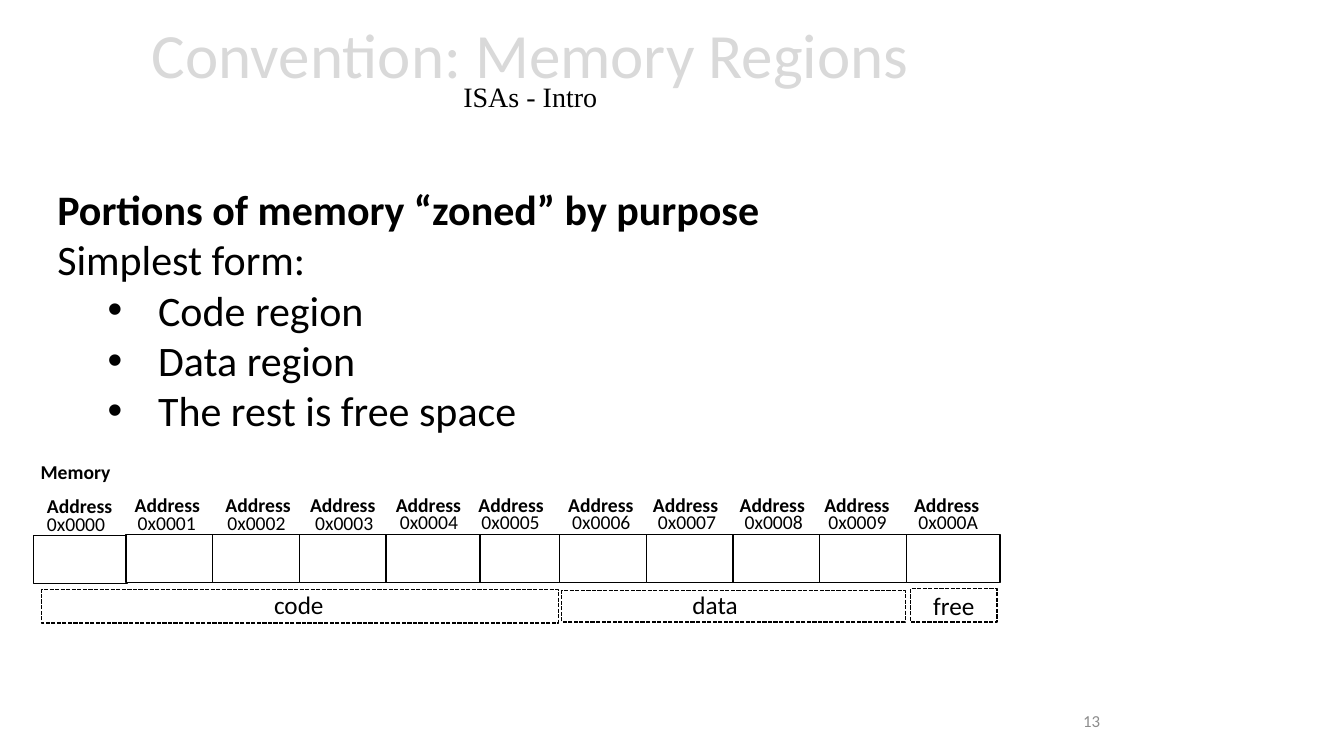
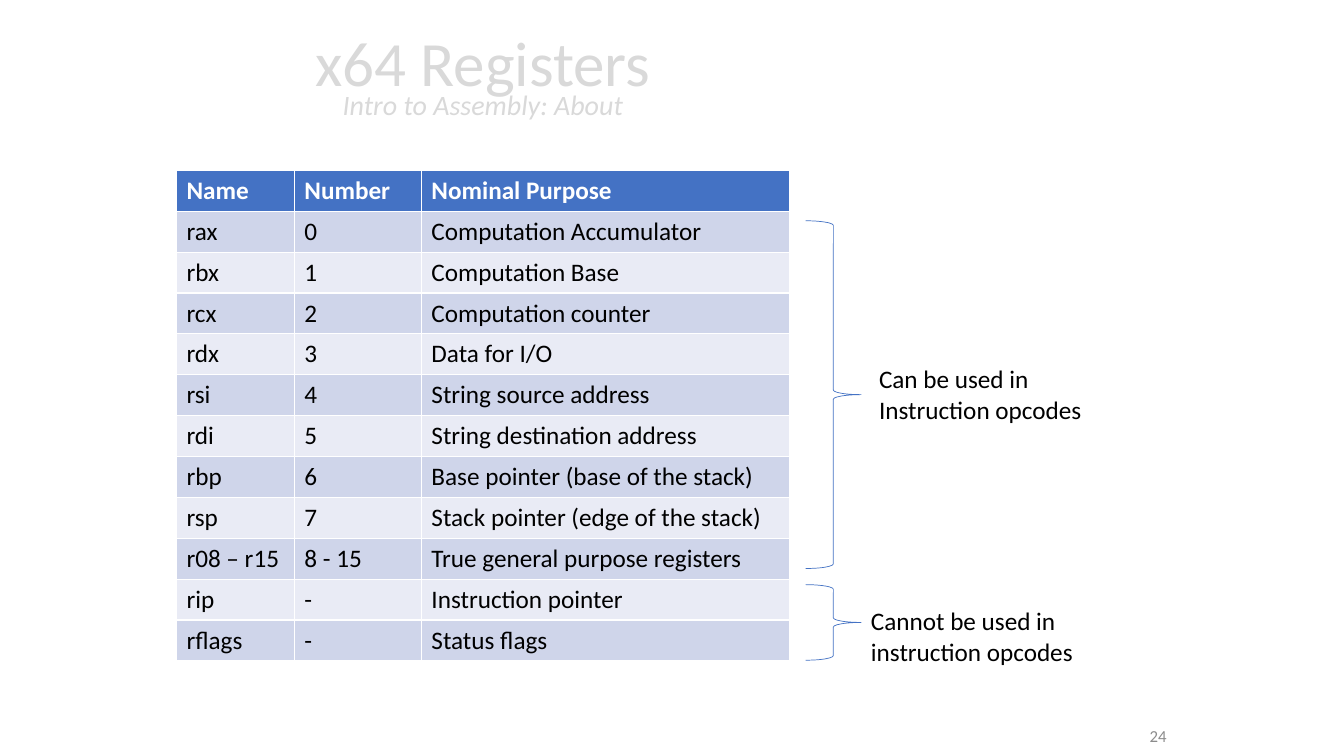
from dataclasses import dataclass

from lxml import etree
from pptx import Presentation
from pptx import util as u
from pptx.dml.color import RGBColor
from pptx.enum import dml, shapes, text
from pptx.oxml import ns

BLACK, WHITE, BLUE = "000000", "FFFFFF", "4472C4"
PALE, GREY = "D9D9D9", "8C8C8C"
BANDS = ("CFD5EA", "E9EBF5")
FONT = "Calibri"


@dataclass(frozen=True)
class Area:
    left: float
    top: float
    width: float
    height: float

    def lengths(self) -> list:
        return [u.Inches(n) for n in (self.left, self.top, self.width, self.height)]


@dataclass(frozen=True)
class Style:
    size: float = 18
    color: str = BLACK
    bold: bool = False
    italic: bool = False
    font: str = FONT


@dataclass(frozen=True)
class MemoryCell:
    address: str
    heading_left: float
    address_left: float
    address_top: float = 5.01
    offset: float = 0


@dataclass(frozen=True)
class Region:
    name: str
    frame: Area
    label: Area


@dataclass(frozen=True)
class Brace:
    frame: Area
    label: Area
    note: str


TITLE = Style(45, PALE)
SMALL = Style(14)
SMALL_BOLD = Style(14, bold=True)

CELLS = (
    MemoryCell("0x0000", 0.40, 0.44, 5.03, 0.01),
    MemoryCell("0x0001", 1.27, 1.34, 5.02),
    MemoryCell("0x0002", 2.17, 2.23, 5.02),
    MemoryCell("0x0003", 3.01, 3.10, 5.02),
    MemoryCell("0x0004", 3.86, 3.94),
    MemoryCell("0x0005", 4.68, 4.75),
    MemoryCell("0x0006", 5.57, 5.65),
    MemoryCell("0x0007", 6.41, 6.50),
    MemoryCell("0x0008", 7.27, 7.36),
    MemoryCell("0x0009", 8.11, 8.19),
    MemoryCell("0x000A", 9.00, 9.09),
)
REGIONS = (
    Region("code", Area(0.41, 5.85, 5.13, 0.33), Area(2.62, 5.8, 0.7, 0.4)),
    Region("data", Area(5.57, 5.86, 3.41, 0.31), Area(6.77, 5.8, 0.66, 0.4)),
)
FREE = Area(9.03, 5.84, 0.86, 0.33)
REGISTERS = (
    ("Name", "Number", "Nominal Purpose"),
    ("rax", "0", "Computation Accumulator"),
    ("rbx", "1", "Computation Base"),
    ("rcx", "2", "Computation counter"),
    ("rdx", "3", "Data for I/O"),
    ("rsi", "4", "String source address"),
    ("rdi", "5", "String destination address"),
    ("rbp", "6", "Base pointer (base of the stack)"),
    ("rsp", "7", "Stack pointer (edge of the stack)"),
    ("r08 – r15", "8 - 15", "True general purpose registers"),
    ("rip", "-", "Instruction pointer"),
    ("rflags", "-", "Status flags"),
)
BRACES = (
    Brace(Area(7.99, 2.19, 0.55, 3.45), Area(8.62, 3.56, 2.23, 0.71),
          "Can be used in\nInstruction opcodes"),
    Brace(Area(7.99, 5.8, 0.55, 0.75), Area(8.54, 5.96, 2.23, 0.71),
          "Cannot be used in\ninstruction opcodes"),
)


# Shared helpers
def rgb(color: str) -> RGBColor:
    return RGBColor.from_string(color)


def format_run(run, style: Style) -> None:
    font = run.font
    font.name, font.size = style.font, u.Pt(style.size)
    font.bold, font.italic = style.bold, style.italic
    font.color.rgb = rgb(style.color)


def fill_text(frame, words: str, style: Style, align=text.PP_ALIGN.LEFT) -> None:
    frame.text = words
    for para in frame.paragraphs:
        para.alignment = align
        for run in para.runs:
            format_run(run, style)


def add_text(parent, area: Area, words: str, style: Style,
             align=text.PP_ALIGN.LEFT, wrap: bool = False,
             anchor=text.MSO_ANCHOR.TOP, side_inset: float = 0.1):
    box = parent.shapes.add_textbox(*area.lengths())
    frame = box.text_frame
    frame.word_wrap = wrap
    frame.vertical_anchor = anchor
    frame.margin_left = frame.margin_right = u.Inches(side_inset)
    fill_text(frame, words, style, align)
    return box


def add_outline(parent, kind, area: Area, color: str = BLACK, weight: float = 1,
                fill: str = "", dashed: bool = False):
    shape = parent.shapes.add_shape(kind, *area.lengths())
    shape.shadow.inherit = False
    if fill:
        shape.fill.solid()
        shape.fill.fore_color.rgb = rgb(fill)
    else:
        shape.fill.background()
    shape.line.color.rgb = rgb(color)
    shape.line.width = u.Pt(weight)
    if dashed:
        shape.line.dash_style = dml.MSO_LINE.SQUARE_DOT
    return shape


def add_bullet(para, margin: float, hanging: float) -> None:
    properties = para._p.get_or_add_pPr()
    properties.set("marL", str(u.Inches(margin)))
    properties.set("indent", str(u.Inches(-hanging)))
    font = etree.SubElement(properties, ns.qn("a:buFont"))
    font.set("typeface", "Arial")
    etree.SubElement(properties, ns.qn("a:buChar")).set("char", "•")


def add_page(deck, title: str, title_area: Area, subtitle: str, subtitle_style: Style,
             number: str, number_area: Area):
    page = deck.slides.add_slide(deck.slide_layouts[6])
    middle = text.MSO_ANCHOR.MIDDLE
    heading = add_text(page, title_area, f"{title}\v{subtitle}", TITLE,
                       text.PP_ALIGN.CENTER, True, middle)
    para = heading.text_frame.paragraphs[0]
    para.line_spacing = 0.7
    format_run(para.runs[1], subtitle_style)
    add_text(page, number_area, number, Style(12, GREY), text.PP_ALIGN.RIGHT, True, middle)
    return page


# Memory regions
def add_memory_label(parent, left: float, top: float, width: float,
                     words: str, style: Style) -> None:
    add_text(parent, Area(left, top, width, 0.34), words, style,
             text.PP_ALIGN.CENTER, True, side_inset=0)


def draw_memory(page) -> None:
    group = page.shapes.add_group_shape()
    # The sixth cell lies behind its neighbours
    for index in sorted(range(len(CELLS)), key=lambda n: n != 5):
        left = 0.39 + 0.86 * index if index else 0.33
        area = Area(left, 5.3 + CELLS[index].offset, 0.93, 0.48)
        add_outline(group, shapes.MSO_SHAPE.RECTANGLE, area, fill=WHITE)
    for cell in CELLS:
        add_memory_label(group, cell.heading_left, 4.84 + cell.offset, 0.78,
                         "Address", SMALL_BOLD)
        add_memory_label(group, cell.address_left, cell.address_top, 0.63,
                         cell.address, SMALL)
    add_memory_label(group, 0.36, 4.51, 0.78, "Memory", SMALL_BOLD)


def build_memory_page(deck) -> None:
    page = add_page(deck, "Convention: Memory Regions", Area(0.26, 0.01, 10, 1.45),
                    "ISAs - Intro", Style(20, font="Times New Roman"),
                    "13", Area(8.01, 6.95, 3, 0.4))
    body = add_text(page, Area(0.47, 1.77, 7.24, 2.63),
                    "Portions of memory “zoned” by purpose\nSimplest form:\n"
                    "Code region\nData region\nThe rest is free space", Style(30))
    paras = body.text_frame.paragraphs
    paras[0].runs[0].font.bold = True
    for para in paras[2:]:
        para.level = 1
        add_bullet(para, 1, 0.5)
    draw_memory(page)

    # Dashed frames naming each region
    rectangle = shapes.MSO_SHAPE.RECTANGLE
    for region in REGIONS:
        add_outline(page, rectangle, region.frame, dashed=True)
        add_text(page, region.label, region.name, Style())
    free = add_outline(page, rectangle, FREE, dashed=True)
    fill_text(free.text_frame, "free", Style(), text.PP_ALIGN.CENTER)


# Registers
def draw_registers(page) -> None:
    area = Area(1.75, 1.69, 6.08, 4.87)
    table = page.shapes.add_table(len(REGISTERS), 3, *area.lengths()).table
    for column, width in zip(table.columns, (1.17, 1.26, 3.65)):
        column.width = u.Inches(width)
    for row, values in enumerate(REGISTERS):
        style = Style() if row else Style(color=WHITE, bold=True)
        color = BANDS[(row - 1) % 2] if row else BLUE
        for column, value in enumerate(values):
            cell = table.cell(row, column)
            cell.fill.solid()
            cell.fill.fore_color.rgb = rgb(color)
            fill_text(cell.text_frame, value, style)


def build_register_page(deck) -> None:
    page = add_page(deck, "x64 Registers", Area(0.48, 0.09, 8.62, 1.45),
                    "Intro to Assembly: About", Style(20, PALE, italic=True),
                    "24", Area(9.42, 7.1, 2.25, 0.4))
    draw_registers(page)
    for brace in BRACES:
        add_outline(page, shapes.MSO_SHAPE.RIGHT_BRACE, brace.frame, BLUE, 0.5)
        add_text(page, brace.label, brace.note, Style())


def main() -> None:
    deck = Presentation()
    deck.slide_width, deck.slide_height = u.Inches(13.33), u.Inches(7.5)
    build_memory_page(deck)
    build_register_page(deck)
    deck.save("out.pptx")


if __name__ == "__main__":
    main()
